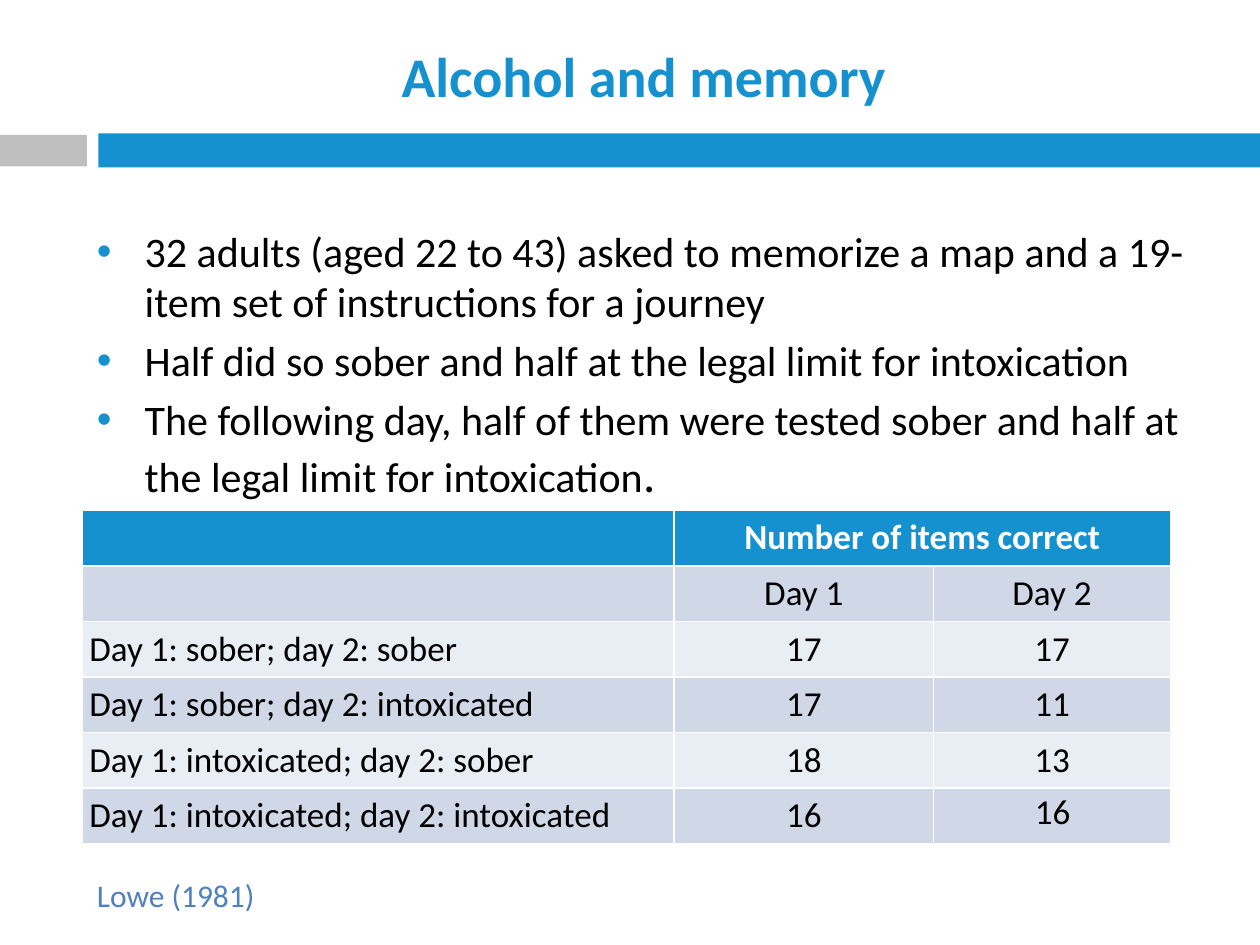
from dataclasses import dataclass

from lxml import etree
from pptx import Presentation
from pptx.dml.color import RGBColor as RGB
from pptx.enum.shapes import MSO_SHAPE as Shape
from pptx.enum.text import MSO_ANCHOR as Anchor, MSO_AUTO_SIZE as Fit, PP_ALIGN as Align
from pptx.oxml.ns import qn
from pptx.util import Inches, Pt


@dataclass(frozen=True)
class Theme:
    face: str = "Calibri"
    blue: str = "1691D0"
    gray: str = "BFBFBF"
    cite: str = "4F81BD"
    ink: str = "000000"
    white: str = "FFFFFF"
    bands: tuple = ("E9EDF4", "D0D8E8")
    head: int = 32
    body: int = 24
    cell: int = 20
    note: int = 18


class Deck:
    def __init__(self, theme):
        self.theme = theme
        self.prs = Presentation()
        self.prs.slide_width, self.prs.slide_height = Inches(10), Inches(7.5)
        self.slide = self.prs.slides.add_slide(self.prs.slide_layouts[5])

    def style(self, para, size, color, bold=False, align=Align.LEFT):
        para.alignment = align
        font = para.font
        font.name, font.size, font.bold = self.theme.face, Pt(size), bold
        font.color.rgb = RGB.from_string(color)

    def paint(self, item, color):
        item.fill.solid()
        item.fill.fore_color.rgb = RGB.from_string(color)

    def title(self, text, box):
        shape = self.slide.shapes.title
        shape.left, shape.top, shape.width, shape.height = map(Inches, box)
        frame = shape.text_frame
        frame.text, frame.vertical_anchor = text, Anchor.MIDDLE
        self.style(frame.paragraphs[0], self.theme.head, self.theme.blue, True, Align.CENTER)

    def bar(self, box, color):
        shape = self.slide.shapes.add_shape(Shape.RECTANGLE, *map(Inches, box))
        shape.shadow.inherit = False
        self.paint(shape, color)
        shape.line.fill.background()

    def frame(self, box, wrap=True):
        frame = self.slide.shapes.add_textbox(*map(Inches, box)).text_frame
        frame.word_wrap = wrap
        return frame

    def label(self, text, box, size, color, align=Align.LEFT, wrap=True):
        frame = self.frame(box, wrap)
        frame.auto_size = Fit.SHAPE_TO_FIT_TEXT
        frame.text = text
        self.style(frame.paragraphs[0], size, color, align=align)

    def bullet(self, para):
        props = para._p.get_or_add_pPr()
        props.set("marL", str(Inches(0.38)))
        props.set("indent", str(-Inches(0.38)))
        color = etree.SubElement(props, qn("a:buClr"))
        etree.SubElement(color, qn("a:srgbClr"), val=self.theme.blue)
        etree.SubElement(props, qn("a:buFont"), typeface="Arial")
        etree.SubElement(props, qn("a:buChar"), char="•")

    def points(self, texts, box):
        frame = self.frame(box)
        for i, text in enumerate(texts):
            para = frame.add_paragraph() if i else frame.paragraphs[0]
            para.add_run().text = text
            self.bullet(para)
            if i:
                para.space_before = Pt(4.8)
            self.style(para, self.theme.body, self.theme.ink)
        return para

    def table(self, rows, spot, widths, height):
        theme = self.theme
        size = sum(widths), height * len(rows)
        grid = self.slide.shapes.add_table(
            len(rows), len(widths), *map(Inches, (*spot, *size))).table
        for col, width in zip(grid.columns, widths):
            col.width = Inches(width)
        for r, row in enumerate(rows):
            grid.rows[r].height = Inches(height)
            for c, text in enumerate(row):
                cell = grid.cell(r, c)
                cell.margin_left = cell.margin_right = Inches(0.06)
                cell.text = text
                self.paint(cell, theme.bands[r % 2] if r else theme.blue)
                self.style(cell.text_frame.paragraphs[0], theme.cell,
                           theme.ink if r else theme.white, r == 0,
                           Align.CENTER if c else Align.LEFT)
        return grid


def main():
    theme = Theme()
    deck = Deck(theme)

    # Header bars and title
    deck.bar((0.78, 1.06, 9.22, 0.27), theme.blue)
    deck.bar((0, 1.07, 0.69, 0.25), theme.gray)
    deck.title("Alcohol and memory", (0.78, 0.26, 8.66, 0.68))

    # Results table, with one heading over both days
    grid = deck.table([
        ("", "Number of items correct", ""),
        ("", "Day 1", "Day 2"),
        ("Day 1: sober; day 2: sober", "17", "17"),
        ("Day 1: sober; day 2: intoxicated", "17", "11"),
        ("Day 1: intoxicated; day 2: sober", "18", "13"),
        ("Day 1: intoxicated; day 2: intoxicated", "16", ""),
    ], (0.65, 4.05), (4.7, 2.06, 1.88), 0.44)
    grid.cell(0, 1).merge(grid.cell(0, 2))

    # Study design, closed by a larger full stop
    last = deck.points([
        "32 adults (aged 22 to 43) asked to memorize a map and a 19-item set"
        " of instructions for a journey",
        "Half did so sober and half at the legal limit for intoxication",
        "The following day, half of them were tested sober and half at"
        " the legal limit for intoxication",
    ], (0.67, 1.74, 9.1, 2.56))
    stop = last.add_run()
    stop.text, stop.font.size = ".", Pt(28)

    # Citation, and the last score laid over its cell
    deck.label("Lowe (1981)", (0.67, 6.9, 1.51, 0.4), theme.note, theme.cite)
    deck.label("16", (8.11, 6.22, 0.49, 0.44), theme.cell, theme.ink, Align.CENTER, False)

    deck.prs.save("out.pptx")


if __name__ == "__main__":
    main()
